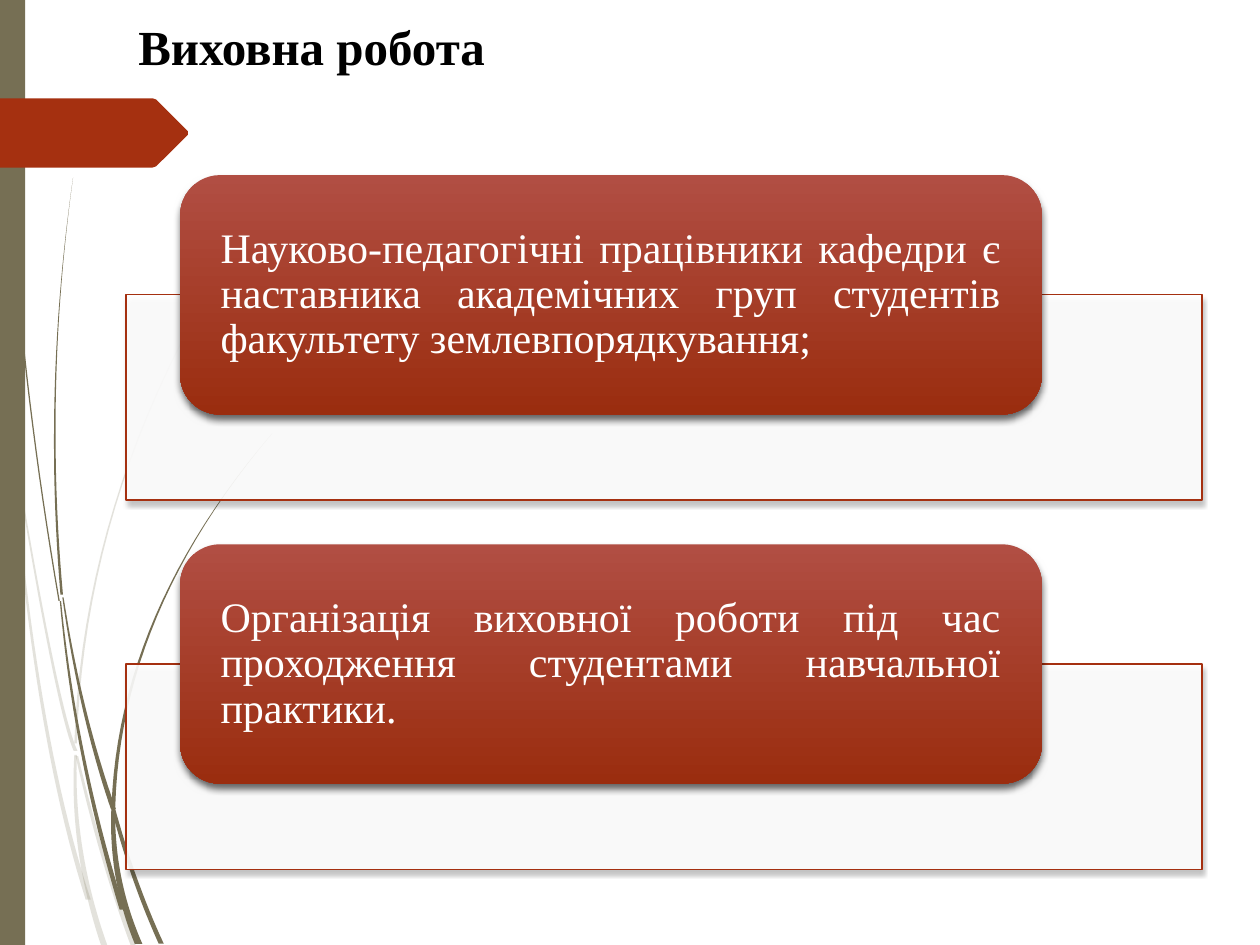
from lxml import etree
from pptx import Presentation
from pptx import util as u
from pptx.dml.color import RGBColor
from pptx.enum import shapes, text
from pptx.oxml import ns

PX = 9144  # 100 px to the inch
COLORS = {"olive": "766F54", "rust": "A53010", "top": "B14E43", "bottom": "9A2D0F",
          "white": "FFFFFF", "black": "000000"}
RGB = {name: RGBColor.from_string(value) for name, value in COLORS.items()}
FONT = "Times New Roman"
CURVE_STEPS = 24

# Start, middle and end of each stem, then its width at the start and at the end.
PALE_STEMS = [
    ((10, 350), (40, 518), (60, 596), 1, 3),
    ((61, 600), (82, 680), (106, 751), 2, 4),
    ((9, 350), (33, 556), (70, 714), 1, 4),
    ((60, 599), (64, 675), (83, 751), 2, 5),
    ((60, 590), (103, 366), (217, 153), 2, 0),
]
DARK_STEMS = [
    ((2, 0), (15, 238), (47, 477), 1, 1),
    ((50, 474), (67, 563), (90, 642), 1, 4),
    ((90, 642), (107, 697), (128, 749), 3, 4),
    ((48, 477), (66, 600), (97, 722), 1, 4),
    ((58, 141), (44, 307), (49, 472), 0, 2),
    ((90, 640), (124, 489), (216, 344), 3, 0),
    ((90, 640), (94, 696), (110, 749), 3, 6),
]
CARDS = [
    "Науково-педагогічні працівники кафедри є наставника академічних груп студентів "
    "факультету землевпорядкування;",
    "Організація виховної роботи під час проходження студентами навчальної практики.",
]
CARD_TOP, CARD_PITCH = 139, 293


def stem_outline(start, middle, end, start_width, end_width):
    """Trace both sides of a tapered arc that passes through three points."""
    left, right = [], []
    for step in range(CURVE_STEPS + 1):
        t = step / CURVE_STEPS
        weights = ((1 - t) * (1 - 2 * t), 4 * t * (1 - t), t * (2 * t - 1))
        x, y = (sum(w * point[axis] for w, point in zip(weights, (start, middle, end)))
                for axis in (0, 1))
        half = (start_width + (end_width - start_width) * t) / 2
        left.append((x - half, y))
        right.append((x + half, y))
    return left + right[::-1]


def add_outline(points, color, opacity=100):
    points = [(round(x * PX), round(y * PX)) for x, y in points]
    builder = page.shapes.build_freeform(*points[0])
    builder.add_line_segments(points[1:], close=True)
    piece = builder.convert_to_shape()
    piece.shadow.inherit = False
    piece.fill.solid()
    piece.fill.fore_color.rgb = RGB[color]
    piece.line.fill.background()
    tint = piece.fill._xPr.find(".//" + ns.qn("a:srgbClr"))
    etree.SubElement(tint, ns.qn("a:alpha"), val=str(opacity * 1000))


deck = Presentation()
deck.slide_width, deck.slide_height = 1000 * PX, 750 * PX
page = deck.slides.add_slide(deck.slide_layouts[6])

# Side decoration
for stems, opacity in ((PALE_STEMS, 20), (DARK_STEMS, 100)):
    for stem in stems:
        add_outline(stem_outline(*stem), "olive", opacity)

band = page.shapes.add_shape(shapes.MSO_SHAPE.RECTANGLE, 0, 0, 20 * PX, 750 * PX)
band.shadow.inherit = False
band.fill.solid()
band.fill.fore_color.rgb = RGB["olive"]
band.line.fill.background()

pointer_top = [(0, 78), (121, 78), (124, 79), (149, 104)]
pointer_bottom = [(x, 211 - y) for x, y in reversed(pointer_top)]
add_outline(pointer_top + pointer_bottom, "rust")

# Title
title = page.shapes.add_textbox(100 * PX, 8 * PX, 772 * PX, 57 * PX)
title.text_frame.word_wrap = True
title.text_frame.text = "Виховна робота"
font = title.text_frame.paragraphs[0].runs[0].font
font.name, font.size, font.bold = FONT, u.Pt(28), True
font.color.rgb = RGB["black"]

# Cards over framed panels
for index, wording in enumerate(CARDS):
    top = CARD_TOP + index * CARD_PITCH
    panel = page.shapes.add_shape(shapes.MSO_SHAPE.RECTANGLE,
                                  100 * PX, (top + 95) * PX, 854 * PX, 163 * PX)
    panel.fill.solid()
    panel.fill.fore_color.rgb = RGB["white"]
    tint = panel.fill._xPr.find(".//" + ns.qn("a:srgbClr"))
    etree.SubElement(tint, ns.qn("a:alpha"), val="90000")
    panel.line.color.rgb = RGB["rust"]
    panel.line.width = u.Pt(0.75)

    card = page.shapes.add_shape(shapes.MSO_SHAPE.ROUNDED_RECTANGLE,
                                 143 * PX, top * PX, 684 * PX, 190 * PX)
    card.fill.gradient()
    card.fill.gradient_angle = 270
    for stop, name in zip(card.fill.gradient_stops, ("top", "bottom")):
        stop.color.rgb = RGB[name]
    card.line.fill.background()

    for shape, opacity, blur, distance in ((panel, 25, 3, 2), (card, 60, 4, 3)):
        shape.shadow.inherit = False
        effects = shape._element.spPr.find(ns.qn("a:effectLst"))
        shadow = etree.SubElement(effects, ns.qn("a:outerShdw"), blurRad=str(u.Pt(blur)),
                                  dist=str(u.Pt(distance)), dir="5400000", rotWithShape="0")
        tint = etree.SubElement(shadow, ns.qn("a:srgbClr"), val=COLORS["black"])
        etree.SubElement(tint, ns.qn("a:alpha"), val=str(opacity * 1000))

    box = page.shapes.add_textbox(152 * PX, (top + 9) * PX, 665 * PX, 172 * PX)
    frame = box.text_frame
    frame.word_wrap = True
    frame.vertical_anchor = text.MSO_ANCHOR.MIDDLE
    frame.margin_left = frame.margin_right = 23 * PX
    frame.margin_top = frame.margin_bottom = 0
    frame.text = wording
    para = frame.paragraphs[0]
    para.alignment = text.PP_ALIGN.JUSTIFY
    para.line_spacing = 0.9
    font = para.runs[0].font
    font.name, font.size = FONT, u.Pt(24)
    font.color.rgb = RGB["white"]

deck.save("out.pptx")
